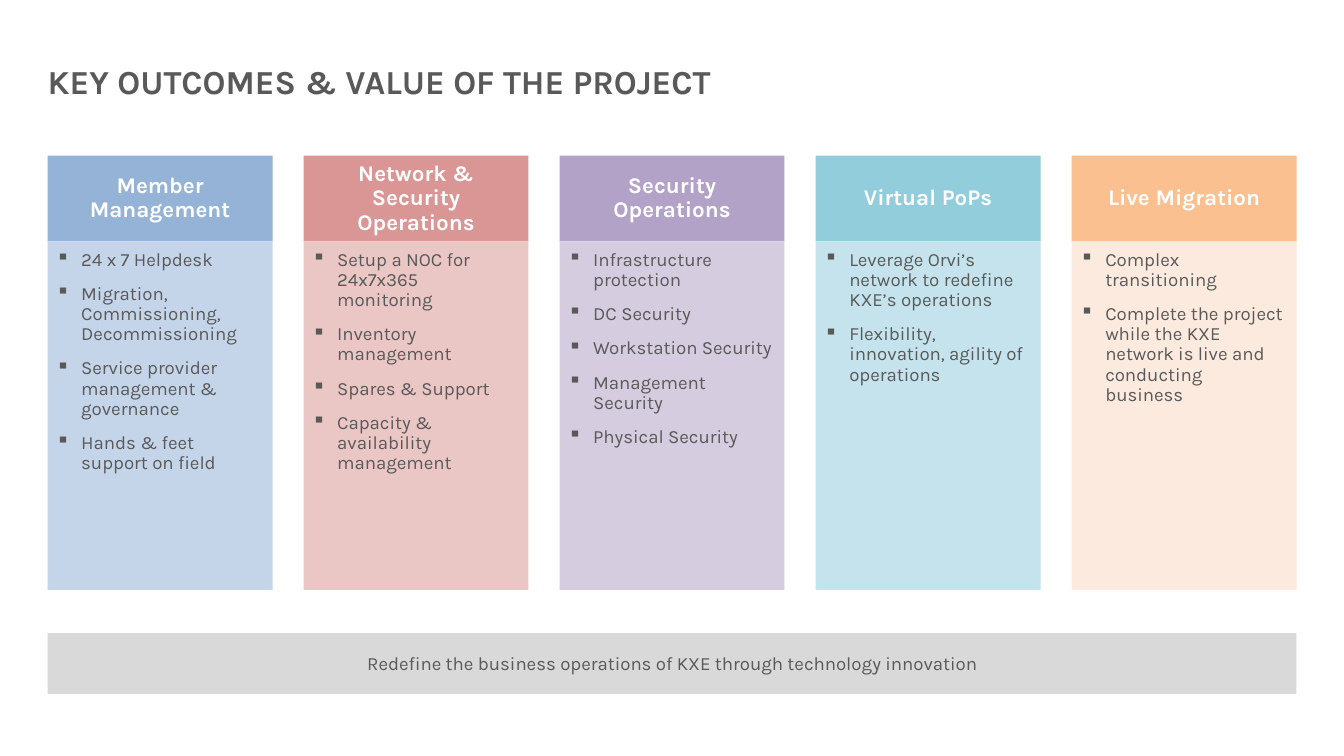
from lxml import etree
from pptx import Presentation
from pptx.dml.color import RGBColor
from pptx.enum.shapes import MSO_SHAPE
from pptx.enum.text import MSO_ANCHOR, PP_ALIGN
from pptx.oxml.ns import qn
from pptx.util import Pt

RECT = MSO_SHAPE.RECTANGLE
TOP, MIDDLE = MSO_ANCHOR.TOP, MSO_ANCHOR.MIDDLE
LEFT, CENTER = PP_ALIGN.LEFT, PP_ALIGN.CENTER
FONT = "Karla"
COLORS = {"text": "595959", "white": "FFFFFF", "bar": "D9D9D9"}

EDGE, WIDTH, PITCH = 25.5, 120.5, 137.15
HEAD_TOP, HEAD_TALL, BODY_TALL = 83.4, 46, 186.6
INDENT = 13.5

COLUMNS = [
    ("Member Management", "95B3D7", "BFD1E7", [
        "24 x 7 Helpdesk",
        "Migration, Commissioning, Decommissioning",
        "Service provider management & governance",
        "Hands & feet support on field"]),
    ("Network & Security Operations", "D99694", "E8C0BF", [
        "Setup a NOC for 24x7x365 monitoring",
        "Inventory management",
        "Spares & Support",
        "Capacity & availability management"]),
    ("Security Operations", "B2A2C7", "D1C7DD", [
        "Infrastructure protection",
        "DC Security",
        "Workstation Security",
        "Management Security",
        "Physical Security"]),
    ("Virtual PoPs", "92CDDC", "BEE1EA", [
        "Leverage Orvi’s network to redefine KXE’s operations",
        "Flexibility, innovation, agility of operations"]),
    ("Live Migration", "FAC08F", "FDE8DB", [
        "Complex transitioning",
        "Complete the project while the KXE network is live and conducting business"]),
]


def style(para, size, color, bold=False, align=LEFT):
    para.alignment = align
    for run in para.runs:
        font = run.font
        font.name, font.size, font.bold = FONT, Pt(size), bold
        font.color.rgb = RGBColor.from_string(color)


def set_frame(frame, anchor, insets):
    frame.word_wrap = True
    frame.vertical_anchor = anchor
    (frame.margin_left, frame.margin_top,
     frame.margin_right, frame.margin_bottom) = map(Pt, insets)


def add_box(slide, left, top, width, height, color):
    box = slide.shapes.add_shape(RECT, Pt(left), Pt(top), Pt(width), Pt(height))
    box.shadow.inherit = False
    box.fill.solid()
    box.fill.fore_color.rgb = RGBColor.from_string(color)
    box.line.fill.background()
    return box


def add_label(box, text, size, color, bold=False):
    frame = box.text_frame
    set_frame(frame, MIDDLE, (6.7, 3.6, 6.7, 3.6))
    frame.text = text
    para = frame.paragraphs[0]
    style(para, size, color, bold, CENTER)
    return para


def set_alpha(box, percent):
    color = box.fill._xPr.find(qn("a:solidFill"))[0]
    etree.SubElement(color, qn("a:alpha"), val=str(percent * 1000))


def add_bullet(para):
    props = para._p.get_or_add_pPr()
    props.set("marL", str(Pt(INDENT)))
    props.set("indent", str(-Pt(INDENT)))
    etree.SubElement(props, qn("a:buChar"), char="▪")


def add_list(box, items):
    frame = box.text_frame
    set_frame(frame, TOP, (4.5, 4.5, 6.7, 7.2))
    frame.text = "\n".join(items)
    for para in frame.paragraphs:
        add_bullet(para)
        para.line_spacing = 0.9
        para.space_after = Pt(7.5)
        style(para, 10, COLORS["text"])


def add_column(slide, left, name, dark, light, items):
    head = add_box(slide, left, HEAD_TOP, WIDTH, HEAD_TALL, dark)
    add_label(head, name, 12, COLORS["white"], True).line_spacing = 0.9
    body = add_box(slide, left, HEAD_TOP + HEAD_TALL, WIDTH, BODY_TALL, light)
    set_alpha(body, 90)
    add_list(body, items)


def set_title(slide, text):
    title = slide.shapes.title
    title.left, title.top, title.width, title.height = map(Pt, (EDGE, 29, 593, 29))
    frame = title.text_frame
    set_frame(frame, MIDDLE, (0, 3.6, 7.2, 3.6))
    frame.text = text
    style(frame.paragraphs[0], 18, COLORS["text"], True)


def main():
    deck = Presentation()
    deck.slide_width, deck.slide_height = Pt(720), Pt(405)
    slide = deck.slides.add_slide(deck.slide_layouts[5])
    set_title(slide, "KEY OUTCOMES & VALUE OF THE PROJECT")
    for index, column in enumerate(COLUMNS):
        add_column(slide, EDGE + index * PITCH, *column)
    bar = add_box(slide, EDGE, 339.2, 4 * PITCH + WIDTH, 32.6, COLORS["bar"])
    add_label(bar, "Redefine the business operations of KXE through technology innovation",
              10, COLORS["text"])
    deck.save("out.pptx")


if __name__ == "__main__":
    main()
